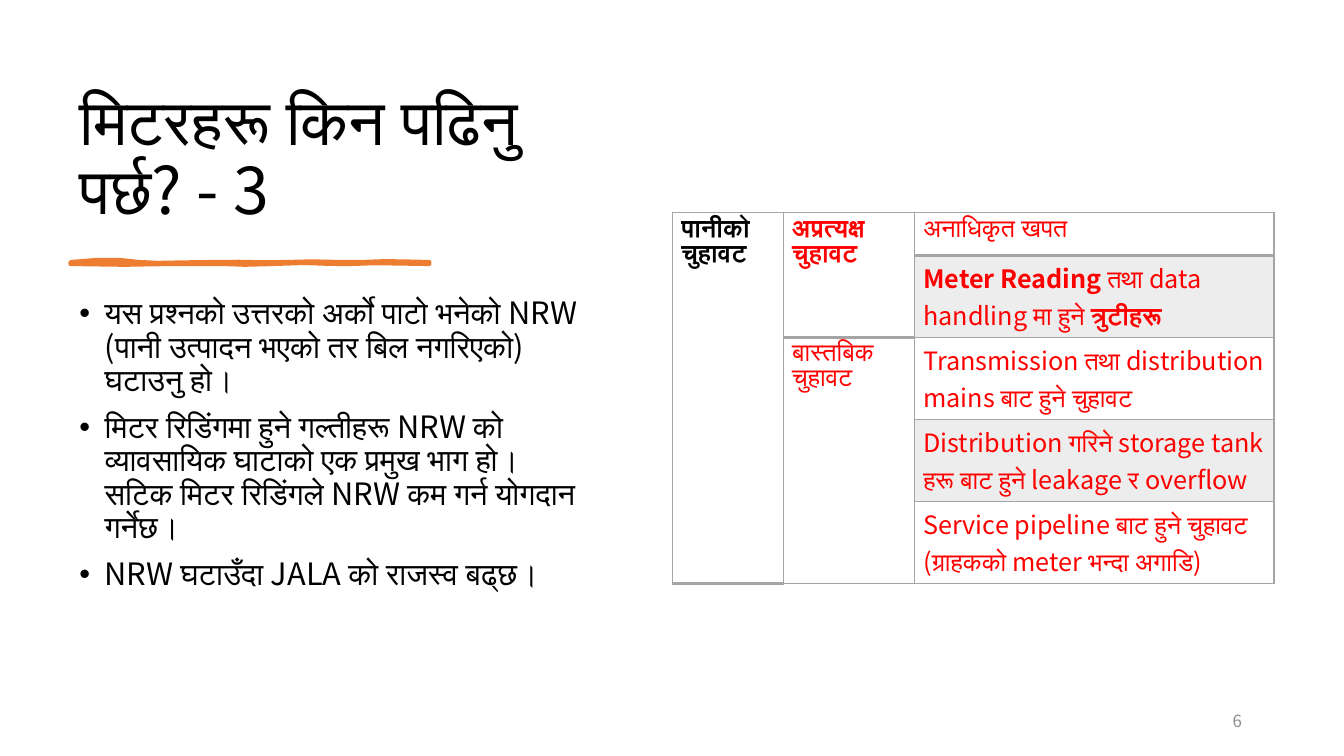
from dataclasses import dataclass
from typing import Optional

from lxml import etree
from pptx import Presentation
from pptx import util as u
from pptx.dml.color import RGBColor
from pptx.enum import text
from pptx.oxml import ns

Point = tuple[float, float]


@dataclass(frozen=True)
class Theme:
    font: str = "Noto Sans CJK JP"
    black: str = "000000"
    red: str = "FF0000"
    orange: str = "ED7D31"
    grid: str = "A5A5A5"
    band: str = "EDEDED"
    page: str = "8C8C8C"
    title_size: int = 46
    body_size: int = 22
    cell_size: int = 18
    page_size: int = 12


@dataclass(frozen=True)
class TextBlock:
    box: tuple[float, float, float, float]
    lines: list[str]
    size: int
    color: str
    anchor: text.MSO_ANCHOR = text.MSO_ANCHOR.TOP
    align: text.PP_ALIGN = text.PP_ALIGN.LEFT
    spacing: Optional[float] = None
    bullet: bool = False


@dataclass(frozen=True)
class TableCell:
    row: int
    col: int
    runs: list[tuple[str, bool]]
    color: str
    span: int = 1
    banded: bool = False


T = Theme()

BLOCKS = [
    TextBlock((49.7, 50.4, 379.4, 116.6), ["मिटरहरू किन पढिनु पर्छ? - 3"],
              T.title_size, T.black, text.MSO_ANCHOR.BOTTOM, spacing=0.9),
    TextBlock((49.7, 209.5, 379.4, 279.4), [
        "यस प्रश्नको उत्तरको अर्को पाटो भनेको NRW (पानी उत्पादन भएको तर बिल नगरिएको) घटाउनु हो।",
        "मिटर रिडिंगमा हुने गल्तीहरू NRW को व्यावसायिक घाटाको एक प्रमुख भाग हो। "
        "सटिक मिटर रिडिंगले NRW कम गर्न योगदान गर्नेछ।",
        "NRW घटाउँदा JALA को राजस्व बढ्छ।",
    ], T.body_size, T.black, spacing=0.9, bullet=True),
    TextBlock((678.2, 500.4, 216, 28.8), ["6"], T.page_size, T.page,
              text.MSO_ANCHOR.MIDDLE, text.PP_ALIGN.RIGHT),
]

COLUMNS = [79.2, 93.6, 257]
ROWS = [30.4] + [58.6] * 4
CELLS = [
    TableCell(0, 0, [("पानीको चुहावट", True)], T.black, span=5),
    TableCell(0, 1, [("अप्रत्यक्ष चुहावट", True)], T.red, span=2),
    TableCell(2, 1, [("बास्तबिक चुहावट", False)], T.red, span=3),
    TableCell(0, 2, [("अनाधिकृत खपत", False)], T.red),
    TableCell(1, 2, [("Meter Reading ", True), ("तथा data handling मा हुने ", False),
                     ("त्रुटीहरू", True)], T.red, banded=True),
    TableCell(2, 2, [("Transmission तथा distribution mains बाट हुने चुहावट", False)], T.red),
    TableCell(3, 2, [("Distribution गरिने storage tank हरू बाट हुने leakage र overflow", False)],
              T.red, banded=True),
    TableCell(4, 2, [("Service pipeline बाट हुने चुहावट (ग्राहकको meter भन्दा अगाडि)", False)], T.red),
]

# Bezier points: a start, then two controls and an end per curve
RULE_EDGE = [
    (50.4, 187.2), (69.8, 185), (87.1, 185), (99.4, 187.2),
    (111.6, 188.6), (127.4, 187.2), (150.5, 187.2), (173.5, 186.5), (187.9, 187.9), (204.5, 187.2),
    (221.8, 185.8), (244.1, 187.9), (258.5, 187.2), (272.9, 185.8), (296.6, 187.2), (306.7, 187.2),
    (306.7, 187.2), (306.7, 187.9), (306.7, 188.6), (293.8, 188.6), (262.1, 187.2), (250.6, 188.6),
    (239, 189.4), (218.9, 186.5), (194.4, 188.6), (169.2, 190.1), (166.3, 187.9), (143.3, 188.6),
    (119.5, 187.9), (95, 190.1), (50.4, 188.6),
]


def style_run(r, size: int, color: str, bold: bool = False) -> None:
    r.font.name = T.font
    r.font.size = u.Pt(size)
    r.font.bold = bold
    r.font.color.rgb = RGBColor.from_string(color)


def add_text(s, block: TextBlock) -> None:
    tf = s.shapes.add_textbox(*map(u.Pt, block.box)).text_frame
    tf.word_wrap = True
    tf.vertical_anchor = block.anchor
    tf.text = "\n".join(block.lines)
    for i, p in enumerate(tf.paragraphs):
        p.alignment = block.align
        if block.spacing:
            p.line_spacing = block.spacing
        if i:
            p.space_before = u.Pt(10)
        if block.bullet:
            pPr = p._p.get_or_add_pPr()
            pPr.set("marL", str(u.Pt(18)))
            pPr.set("indent", str(-u.Pt(18)))
            etree.SubElement(pPr, ns.qn("a:buFont")).set("typeface", "Arial")
            etree.SubElement(pPr, ns.qn("a:buChar")).set("char", "•")
        style_run(p.runs[0], block.size, block.color)


def sample_curves(points: list[Point], steps: int = 3) -> list[Point]:
    result = [points[0]]
    for i in range(0, len(points) - 1, 3):
        a, b, c, d = points[i:i + 4]
        for k in range(1, steps + 1):
            t = k / steps
            weights = ((1 - t) ** 3, 3 * t * (1 - t) ** 2, 3 * t * t * (1 - t), t ** 3)
            x, y = (sum(w * q[axis] for w, q in zip(weights, (a, b, c, d))) for axis in (0, 1))
            result.append((x, y))
    return result


def add_title_rule(s) -> None:
    start, *rest = [(u.Pt(x), u.Pt(y)) for x, y in sample_curves(RULE_EDGE)]
    builder = s.shapes.build_freeform(*start)
    builder.add_line_segments(rest, close=True)
    sp = builder.convert_to_shape()
    sp.shadow.inherit = False
    for ink in (sp.fill, sp.line.fill):
        ink.solid()
        ink.fore_color.rgb = RGBColor.from_string(T.orange)
    sp.line.width = u.Pt(3)


def set_borders(cell, bottom: int) -> None:
    tcPr = cell._tc.get_or_add_tcPr()
    for i, (side, width) in enumerate({"L": 1, "R": 1, "T": 1, "B": bottom}.items()):
        ln = etree.Element(ns.qn(f"a:ln{side}"), w=str(u.Pt(width)))
        fill = etree.SubElement(ln, ns.qn("a:solidFill"))
        etree.SubElement(fill, ns.qn("a:srgbClr")).set("val", T.grid)
        tcPr.insert(i, ln)


def add_losses_table(s) -> None:
    frame = s.shapes.add_table(len(ROWS), len(COLUMNS), u.Pt(480.2), u.Pt(152),
                               u.Pt(sum(COLUMNS)), u.Pt(sum(ROWS)))
    table = frame.table
    table.first_row = table.horz_banding = False
    for column, width in zip(table.columns, COLUMNS):
        column.width = u.Pt(width)
    for row, height in zip(table.rows, ROWS):
        row.height = u.Pt(height)
    for cell in table.iter_cells():
        cell.fill.background()
    for item in CELLS:
        cell = table.cell(item.row, item.col)
        if item.banded:
            cell.fill.solid()
            cell.fill.fore_color.rgb = RGBColor.from_string(T.band)
        cell.margin_left = cell.margin_right = u.Pt(6.5)
        cell.margin_top = cell.margin_bottom = u.Pt(3)
        p = cell.text_frame.paragraphs[0]
        for words, bold in item.runs:
            r = p.add_run()
            r.text = words
            style_run(r, T.cell_size, item.color, bold)
        for k in range(item.span):
            set_borders(table.cell(item.row + k, item.col), 2 if item.row == 0 else 1)
        if item.span > 1:
            cell.merge(table.cell(item.row + item.span - 1, item.col))


def main() -> None:
    prs = Presentation()
    prs.slide_width, prs.slide_height = u.Pt(960), u.Pt(540)
    s = prs.slides.add_slide(prs.slide_layouts[6])
    # Title, bullets and page number
    for block in BLOCKS:
        add_text(s, block)
    # Hand-drawn rule under the title
    add_title_rule(s)
    # Water loss breakdown
    add_losses_table(s)
    prs.save("out.pptx")


if __name__ == "__main__":
    main()
